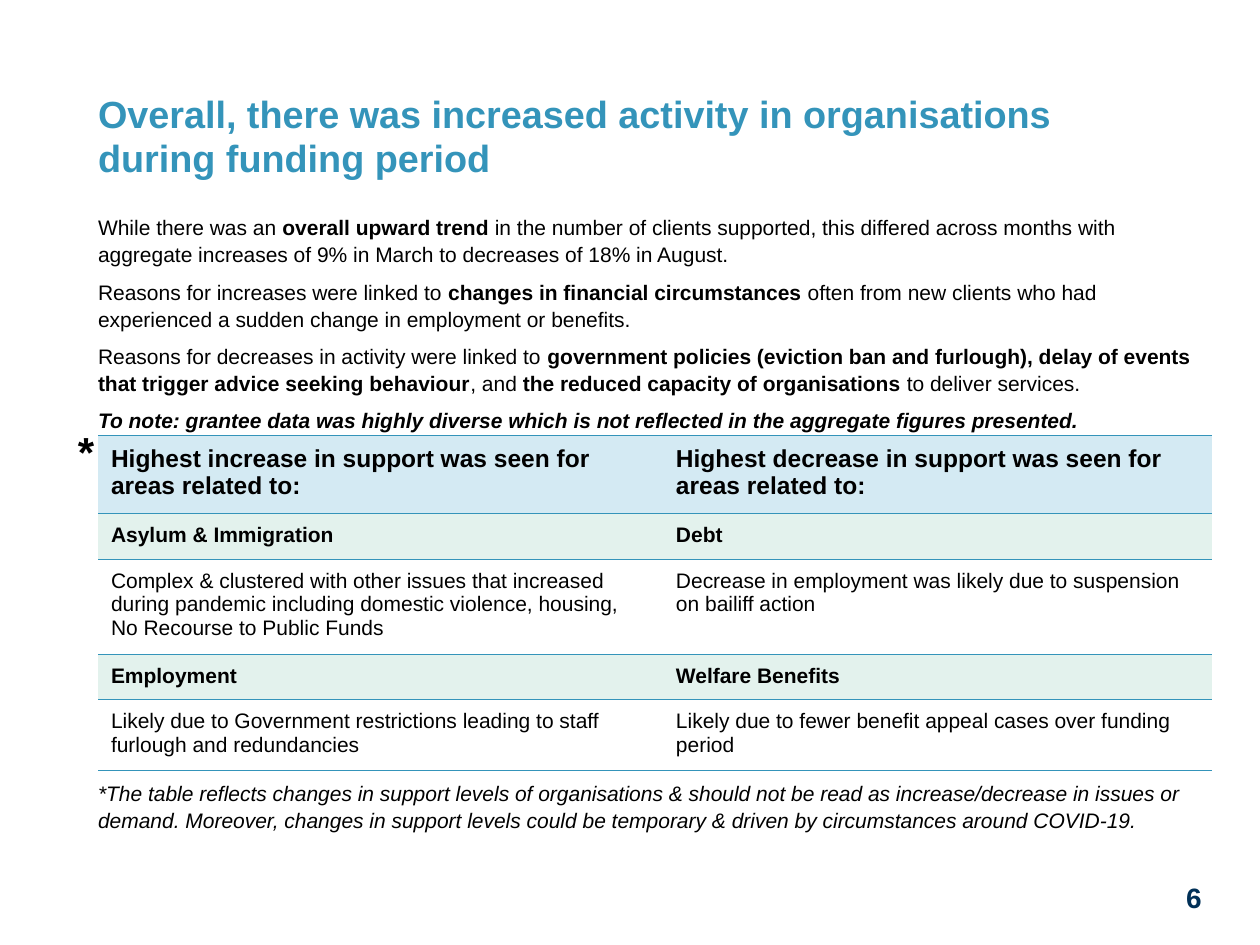
import pptx
import pptx.dml.color
import pptx.enum.shapes
import pptx.enum.text
import pptx.oxml
import pptx.oxml.ns
import pptx.util

RGBColor = pptx.dml.color.RGBColor
PP_ALIGN = pptx.enum.text.PP_ALIGN
MSO_ANCHOR = pptx.enum.text.MSO_ANCHOR

TEAL = RGBColor(0x34, 0x94, 0xBA)
NAVY = RGBColor(0x00, 0x30, 0x57)
BLACK = RGBColor(0x00, 0x00, 0x00)
WHITE = RGBColor(0xFF, 0xFF, 0xFF)
PALE_BLUE = RGBColor(0xD4, 0xEA, 0xF3)
PALE_GREEN = RGBColor(0xE3, 0xF2, 0xED)

FONT = "Arial"
PX_PER_INCH = 126
LEFT, WIDTH = 98, 1114
INSET_X, INSET_Y = 13, 10

# Each paragraph is a list of (text, style), style holding "b" and/or "i"
FINDINGS = [
    [("While there was an ", ""), ("overall upward trend ", "b"),
     ("in the number of clients supported, this differed across months with "
      "aggregate increases of 9% in March to decreases of 18% in August.", "")],
    [("Reasons for increases were linked to ", ""),
     ("changes in financial circumstances", "b"),
     (" often from new clients who had experienced a sudden change in "
      "employment or benefits.", "")],
    [("Reasons for decreases in activity were linked to ", ""),
     ("government policies (eviction ban and furlough), delay of events that "
      "trigger advice seeking behaviour", "b"),
     (", and ", ""), ("the reduced capacity of organisations ", "b"),
     ("to deliver services.", "")],
    [("To note: grantee data was highly diverse which is not reflected in the "
      "aggregate figures presented.", "bi")],
]

FOOTNOTE = ("*The table reflects changes in support levels of organisations & "
            "should not be read as increase/decrease in issues or demand. "
            "Moreover, changes in support levels could be temporary & driven by "
            "circumstances around COVID-19.")

COLUMN_WIDTHS = [565, 549]

# Row kind: fill, text size, style
HEADER = (PALE_BLUE, 14, "b")
AREA = (PALE_GREEN, 12, "b")
DETAIL = (WHITE, 12, "")

SUPPORT_ROWS = [
    (75, HEADER, "Highest increase in support was seen for areas related to:",
     "Highest decrease in support was seen for areas related to:"),
    (43, AREA, "Asylum & Immigration", "Debt"),
    (91, DETAIL, "Complex & clustered with other issues that increased during "
     "pandemic including domestic violence, housing, No Recourse to Public Funds",
     "Decrease in employment was likely due to suspension on bailiff action"),
    (43, AREA, "Employment", "Welfare Benefits"),
    (67, DETAIL, "Likely due to Government restrictions leading to staff furlough "
     "and redundancies",
     "Likely due to fewer benefit appeal cases over funding period"),
]


def px(length):
    return pptx.util.Emu(round(length * 914400 / PX_PER_INCH))


def add_runs(paragraph, runs, size, color=BLACK):
    for text, style in runs:
        run = paragraph.add_run()
        run.text = text
        run.font.name = FONT
        run.font.size = pptx.util.Pt(size)
        run.font.color.rgb = color
        run.font.bold = "b" in style
        run.font.italic = "i" in style


def fill_frame(frame, paragraphs, size, color=BLACK, align=PP_ALIGN.LEFT,
               anchor=MSO_ANCHOR.TOP, spacing=None, after=0, inset=(0, 0)):
    frame.word_wrap = True
    frame.vertical_anchor = anchor
    frame.margin_left = frame.margin_right = px(inset[0])
    frame.margin_top = frame.margin_bottom = px(inset[1])
    for index, runs in enumerate(paragraphs):
        paragraph = frame.add_paragraph() if index else frame.paragraphs[0]
        paragraph.alignment = align
        paragraph.space_after = pptx.util.Pt(after)
        if spacing:
            paragraph.line_spacing = spacing
        add_runs(paragraph, runs, size, color)


def add_text(slide, box, text, style, size, **layout):
    frame = slide.shapes.add_textbox(*map(px, box)).text_frame
    fill_frame(frame, [[(text, style)]], size, **layout)


def add_findings(slide, box):
    panel = slide.shapes.add_shape(
        pptx.enum.shapes.MSO_SHAPE.RECTANGLE, *map(px, box))
    panel.shadow.inherit = False
    panel.fill.solid()
    panel.fill.fore_color.rgb = WHITE
    panel.line.fill.background()
    fill_frame(panel.text_frame, FINDINGS, 12, spacing=1.07, after=6)


def set_borders(cell):
    """Teal hairlines above and below the cell, none at its sides."""
    namespace = pptx.oxml.ns.nsdecls("a")
    hairline = f'<a:solidFill><a:srgbClr val="{TEAL}"/></a:solidFill>'
    sides = [("lnL", "<a:noFill/>"), ("lnR", "<a:noFill/>"),
             ("lnT", hairline), ("lnB", hairline)]
    properties = cell._tc.get_or_add_tcPr()
    for index, (side, paint) in enumerate(sides):
        properties.insert(index, pptx.oxml.parse_xml(
            f'<a:{side} {namespace} w="6350">{paint}</a:{side}>'))


def add_support_table(slide, left, top):
    height = sum(row[0] for row in SUPPORT_ROWS)
    table = slide.shapes.add_table(
        len(SUPPORT_ROWS), len(COLUMN_WIDTHS),
        px(left), px(top), px(WIDTH), px(height)).table
    table.first_row = table.horz_banding = False
    for column, width in zip(table.columns, COLUMN_WIDTHS):
        column.width = px(width)
    for row, (row_height, kind, *texts) in zip(table.rows, SUPPORT_ROWS):
        row.height = px(row_height)
        fill, size, style = kind
        for cell, text in zip(row.cells, texts):
            cell.fill.solid()
            cell.fill.fore_color.rgb = fill
            cell.margin_left = cell.margin_right = px(INSET_X)
            cell.margin_top = cell.margin_bottom = px(INSET_Y)
            add_runs(cell.text_frame.paragraphs[0], [(text, style)], size)
            set_borders(cell)


def main():
    deck = pptx.Presentation()
    deck.slide_width, deck.slide_height = px(1260), px(945)
    slide = deck.slides.add_slide(deck.slide_layouts[6])

    # Title and page number
    add_text(slide, (LEFT, 93, 1063, 48),
             "Overall, there was increased activity in organisations during "
             "funding period", "b", 21.6, color=TEAL, spacing=0.97)
    add_text(slide, (1175, 881, 38, 35), "6", "b", 16, color=NAVY,
             align=PP_ALIGN.CENTER)

    # Findings, footnote and table
    add_findings(slide, (LEFT, 213, WIDTH, 223))
    add_text(slide, (LEFT, 770, WIDTH, 71), FOOTNOTE, "i", 12,
             anchor=MSO_ANCHOR.MIDDLE, spacing=1.07)
    add_support_table(slide, LEFT, 435)

    # Footnote mark beside the table
    add_text(slide, (65, 415, 66, 71), "*", "b", 24, inset=(INSET_X, INSET_Y))

    deck.save("out.pptx")


if __name__ == "__main__":
    main()
